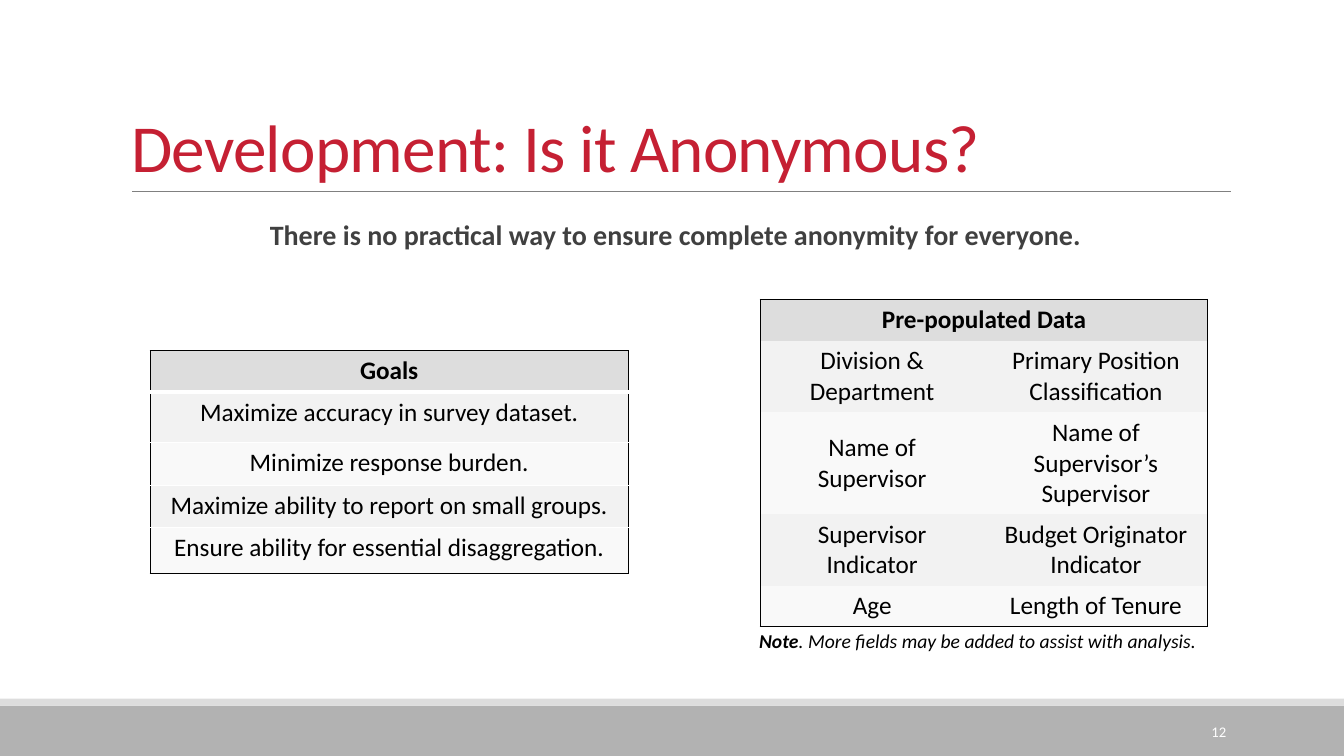
from lxml import etree
from pptx import Presentation
from pptx import util as u
from pptx.dml.color import RGBColor
from pptx.enum import shapes, text
from pptx.oxml.ns import qn

WIDE, HIGH = 13.33, 7.5
FONT = "Calibri"
RED = RGBColor(0xC5, 0x20, 0x33)
BLACK = RGBColor(0, 0, 0)
WHITE = RGBColor(0xFF, 0xFF, 0xFF)
DARK = RGBColor(0x40, 0x40, 0x40)
RULE = RGBColor(0x80, 0x80, 0x80)
BAND = RGBColor(0xB2, 0xB2, 0xB2)
HEAD = RGBColor(0xDD, 0xDD, 0xDD)
STRIPES = RGBColor(0xF2, 0xF2, 0xF2), RGBColor(0xF9, 0xF9, 0xF9)
MID = text.PP_ALIGN.CENTER

GOALS = [
    ["Goals"],
    ["Maximize accuracy in survey dataset."],
    ["Minimize response burden."],
    ["Maximize ability to report on small groups."],
    ["Ensure ability for essential disaggregation."],
]
FIELDS = [
    ["Pre-populated Data", ""],
    ["Division & Department", "Primary Position Classification"],
    ["Name of\nSupervisor", "Name of Supervisor’s Supervisor"],
    ["Supervisor Indicator", "Budget Originator Indicator"],
    ["Age", "Length of Tenure"],
]


def inches(*sizes):
    return [u.Inches(size) for size in sizes]


def style(para, size, color, bold=False, align=None):
    font = para.font
    font.name, font.size, font.bold = FONT, u.Pt(size), bold
    font.color.rgb = color
    para.alignment = align


def add_text(slide, box, words, wrap=True):
    frame = slide.shapes.add_textbox(*inches(*box)).text_frame
    frame.word_wrap = wrap
    para = frame.paragraphs[0]
    para.text = words
    return frame, para


def add_bar(slide, box, color):
    bar = slide.shapes.add_shape(shapes.MSO_SHAPE.RECTANGLE, *inches(*box))
    bar.shadow.inherit = False
    bar.fill.solid()
    bar.fill.fore_color.rgb = color
    bar.line.fill.background()


def add_foot(slide, box, number):
    """Draw the two bands and the page number."""
    left, top, wide, high = box
    thin = high / 8
    add_bar(slide, (left, top + thin, wide, high - thin), BAND)
    add_bar(slide, (left, top, wide, thin), HEAD)
    frame, para = add_text(slide, (left + 10.83, top + 0.13, 1.43, 0.4), number)
    frame.vertical_anchor = text.MSO_ANCHOR.MIDDLE
    style(para, 10.5, WHITE, align=text.PP_ALIGN.RIGHT)


def add_head(slide, box, words, claim):
    """Fill the title, rule it off and set the claim below."""
    left, top, wide, high = box
    base = top + high
    title = slide.shapes.title
    title.left, title.top, title.width, title.height = inches(*box)
    frame = title.text_frame
    frame.text = words
    frame.vertical_anchor = text.MSO_ANCHOR.BOTTOM
    frame.auto_size = text.MSO_AUTO_SIZE.NONE
    para = frame.paragraphs[0]
    style(para, 48, RED, align=text.PP_ALIGN.LEFT)
    para.line_spacing = 0.85
    para.runs[0].font._element.set("spc", "-50")

    rule = slide.shapes.add_connector(
        shapes.MSO_CONNECTOR.STRAIGHT,
        *inches(left + 0.11, base, left + wide + 0.01, base))
    rule.line.color.rgb, rule.line.width = RULE, u.Pt(0.5)
    etree.SubElement(rule._element.spPr, qn("a:effectLst"))

    frame, para = add_text(slide, (left, base + 0.27, wide, 0.4), claim)
    frame.margin_left = frame.margin_right = 0
    style(para, 20, DARK, True, MID)
    para.line_spacing = 0.8
    para.space_before, para.space_after = u.Pt(12), u.Pt(2)


def edge(cell, side, color, width):
    """Set one border of a cell; no colour means no line."""
    props = cell._tc.get_or_add_tcPr()
    line = etree.SubElement(props, qn("a:ln" + side), w=str(u.Pt(width)))
    if color is None:
        etree.SubElement(line, qn("a:noFill"))
    else:
        fill = etree.SubElement(line, qn("a:solidFill"))
        etree.SubElement(fill, qn("a:srgbClr"), val=str(color))


def add_grid(slide, box, rows, highs, anchor, inner):
    """Add a striped table with a black frame and inner row lines."""
    count, cols = len(rows), len(rows[0])
    grid = slide.shapes.add_table(count, cols, *inches(*box)).table
    for col in grid.columns:
        col.width = u.Inches(box[2] / cols)
    for i, (row, high) in enumerate(zip(rows, highs)):
        grid.rows[i].height = u.Inches(high)
        for j, words in enumerate(row):
            cell = grid.cell(i, j)
            cell.text = words
            cell.vertical_anchor = anchor if i else text.MSO_ANCHOR.TOP
            for para in cell.text_frame.paragraphs:
                style(para, 18, BLACK, i == 0, MID)
            edge(cell, "L", None if j else BLACK, 1)
            edge(cell, "R", BLACK if j == cols - 1 or i == 0 else None, 1)
            edge(cell, "T", inner if i else BLACK, 3 if i == 1 else 1)
            edge(cell, "B", BLACK if i == count - 1 else inner, 1 if i else 3)
            cell.fill.solid()
            cell.fill.fore_color.rgb = STRIPES[(i - 1) % 2] if i else HEAD
    if cols > 1:
        grid.cell(0, 0).merge(grid.cell(0, cols - 1))


def add_note(slide, box, lead, rest):
    _, para = add_text(slide, box, lead, wrap=False)
    style(para, 14, BLACK)
    para.font.italic = True
    para.add_run().text = rest
    for run, bold in zip(para.runs, (True, False)):
        font = run.font
        font.name, font.size, font.color.rgb = FONT, u.Pt(14), BLACK
        font.bold, font.italic = bold, True


def main():
    deck = Presentation()
    deck.slide_width, deck.slide_height = inches(WIDE, HIGH)
    slide = deck.slides.add_slide(deck.slide_layouts[5])
    add_foot(slide, (0, HIGH - 0.57, WIDE, 0.57), "12")
    add_head(slide, (1.2, 0.31, 11, 1.59), "Development: Is it Anonymous?",
             "There is no practical way to ensure complete anonymity for everyone.")
    add_grid(slide, (1.49, 3.48, 4.74, 2.2), GOALS,
             (0.41, 0.5, 0.43, 0.41, 0.46), text.MSO_ANCHOR.TOP, WHITE)
    add_grid(slide, (7.54, 2.97, 4.44, 3.21), FIELDS,
             (0.41, 0.71, 1.01, 0.71, 0.41), text.MSO_ANCHOR.MIDDLE, None)
    add_note(slide, (7.43, 6.19, 4.59, 0.34), "Note",
             ". More fields may be added to assist with analysis.")
    deck.save("out.pptx")


if __name__ == "__main__":
    main()
